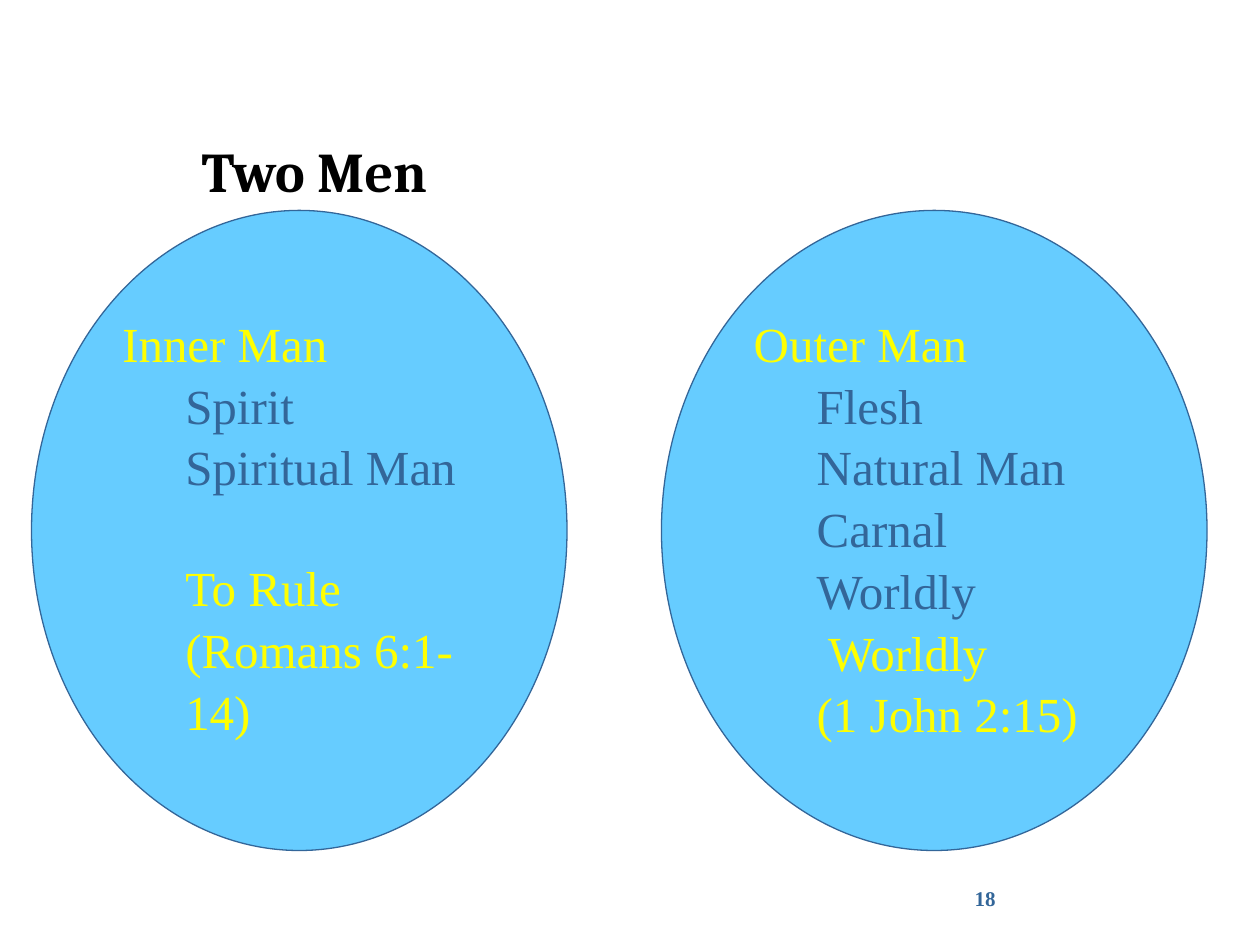
from pptx import Presentation
from pptx.dml.color import RGBColor
from pptx.enum.shapes import MSO_SHAPE
from pptx.enum.text import MSO_ANCHOR, PP_ALIGN
from pptx.util import Inches, Pt

BLACK = RGBColor(0x00, 0x00, 0x00)
SKY = RGBColor(0x66, 0xCC, 0xFF)
STEEL = RGBColor(0x33, 0x66, 0x99)
YELLOW = RGBColor(0xFF, 0xFF, 0x00)
SERIF = "Times New Roman"

INNER_MAN = [
    ("Inner Man", YELLOW, 0, 0),
    ("Spirit", STEEL, 1, 0),
    ("Spiritual Man", STEEL, 1, 0),
    ("To Rule\v(Romans 6:1-14)", YELLOW, 1, 33.8),
]
OUTER_MAN = [
    ("Outer Man", YELLOW, 0, 0),
    ("Flesh", STEEL, 1, 0),
    ("Natural Man", STEEL, 1, 0),
    ("Carnal", STEEL, 1, 0),
    ("Worldly", STEEL, 1, 0),
    (" Worldly", YELLOW, 1, 0),
    ("(1 John 2:15)", YELLOW, 1, 0),
]


def write(para, text, size, color, font=SERIF, bold=False,
          align=PP_ALIGN.LEFT, level=0, before=0, spacing=1.0):
    para.text = text
    para.alignment = align
    para.level = level
    para.space_before = Pt(before)
    para.line_spacing = spacing
    if level:
        props = para._p.get_or_add_pPr()
        props.set("marL", str(Inches(0.5 * level)))
        props.set("indent", "0")
    for span in para.runs:
        span.font.name = font
        span.font.size = Pt(size)
        span.font.bold = bold
        span.font.color.rgb = color


def place_title(page, left, top, width, height):
    title = page.shapes.title
    title.left, title.top = Inches(left), Inches(top)
    title.width, title.height = Inches(width), Inches(height)
    title.text_frame.vertical_anchor = MSO_ANCHOR.BOTTOM
    write(title.text_frame.paragraphs[0], "Two Men", 32, BLACK,
          font="Cambria", bold=True)


def add_man(page, left, top, width, height, lines):
    oval = page.shapes.add_shape(MSO_SHAPE.OVAL, Inches(left), Inches(top),
                                 Inches(width), Inches(height))
    oval.shadow.inherit = False
    oval.fill.solid()
    oval.fill.fore_color.rgb = SKY
    oval.line.color.rgb = STEEL
    oval.line.width = Pt(0.75)
    frame = oval.text_frame
    frame.word_wrap = True
    frame.vertical_anchor = MSO_ANCHOR.TOP
    for index, (text, color, level, before) in enumerate(lines):
        para = frame.add_paragraph() if index else frame.paragraphs[0]
        write(para, text, 28, color, level=level, before=before, spacing=1.05)


def add_page_number(page, left, top, width, height):
    box = page.shapes.add_textbox(Inches(left), Inches(top),
                                  Inches(width), Inches(height))
    box.text_frame.word_wrap = True
    box.text_frame.vertical_anchor = MSO_ANCHOR.MIDDLE
    write(box.text_frame.paragraphs[0], "18", 12, STEEL, bold=True,
          align=PP_ALIGN.RIGHT)


def main():
    deck = Presentation()
    deck.slide_width, deck.slide_height = Inches(10), Inches(7.5)
    page = deck.slides.add_slide(deck.slide_layouts[5])

    # Heading
    place_title(page, 1.5, 0.42, 7.5, 1.25)
    # The two men side by side
    add_man(page, 5.25, 1.67, 4.33, 5.08, OUTER_MAN)
    add_man(page, 0.25, 1.67, 4.25, 5.08, INNER_MAN)
    # Footer
    add_page_number(page, 5.92, 6.92, 2.08, 0.41)

    deck.save("out.pptx")


if __name__ == "__main__":
    main()
